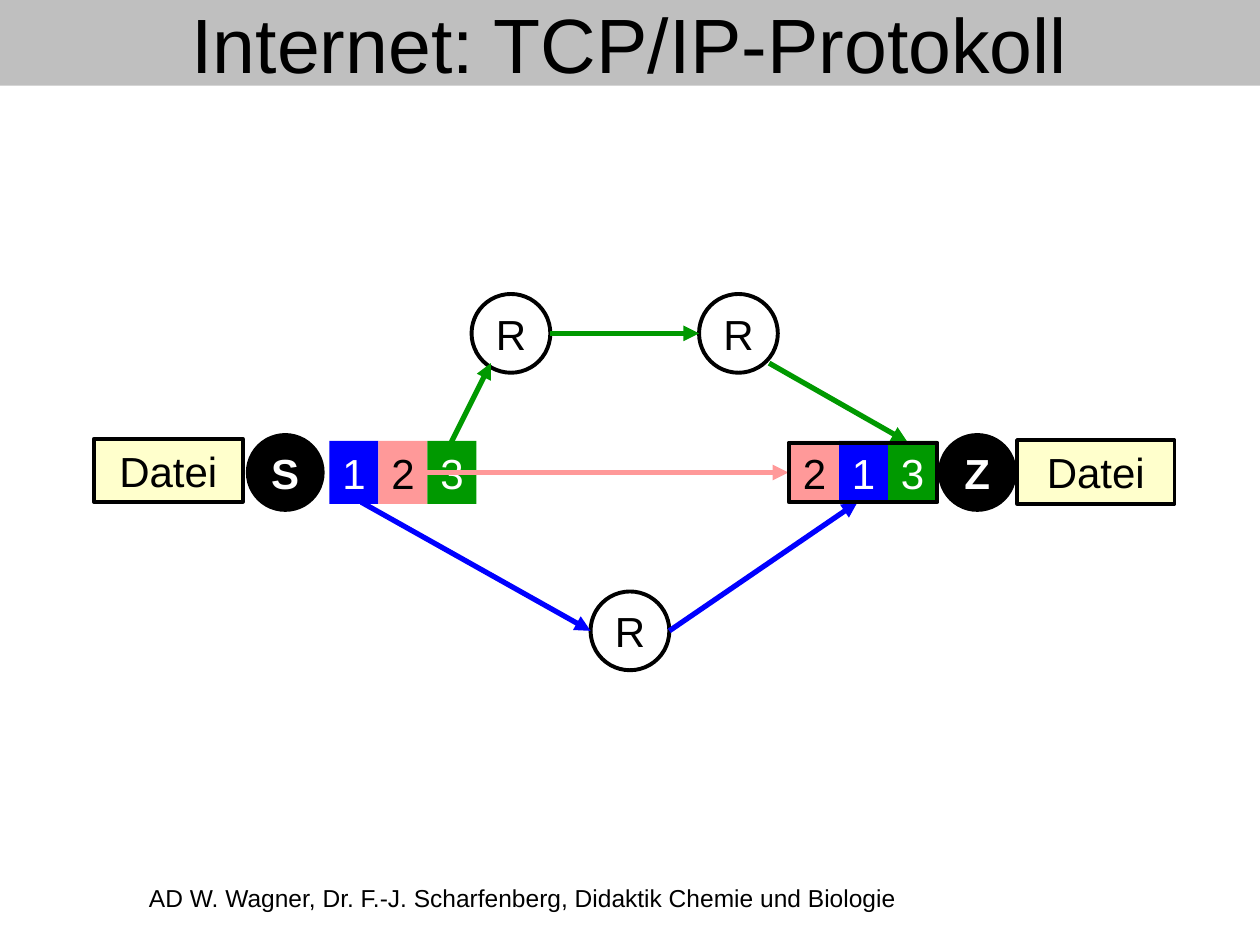
from pptx import Presentation
from pptx.dml.color import RGBColor
from pptx.enum.shapes import MSO_CONNECTOR, MSO_SHAPE
from pptx.enum.text import MSO_ANCHOR, MSO_AUTO_SIZE, PP_ALIGN
from pptx.oxml.ns import qn
from pptx.util import Pt
from lxml.etree import SubElement

COLORS = {
    "black": "000000", "white": "FFFFFF", "gray": "BFBFBF", "cream": "FFFFCC",
    "blue": "0000FF", "pink": "FF9999", "green": "009900",
}
PACKETS = {"1": ("blue", "white"), "2": ("pink", "black"), "3": ("green", "white")}
NODE = 45
PACKET_W, PACKET_H = 28, 36
PACKET_TOP = 252


def rgb(name):
    return RGBColor.from_string(COLORS[name])


class Sketch:
    """Holds the text style and the slide being drawn."""

    def __init__(self, slide, font="Arial", size=24):
        self.s, self.font, self.size = slide, font, size

    def label(self, sp, text, color="black", size=None, bold=False,
              align=PP_ALIGN.CENTER, anchor=MSO_ANCHOR.MIDDLE, wrap=False):
        tf = sp.text_frame
        tf.text = text
        tf.auto_size = MSO_AUTO_SIZE.NONE
        tf.word_wrap = wrap
        tf.vertical_anchor = anchor
        p = tf.paragraphs[0]
        p.alignment = align
        p.font.name, p.font.size, p.font.bold = self.font, Pt(size or self.size), bold
        p.font.color.rgb = rgb(color)

    def title(self, text, height):
        sp = self.s.shapes.title
        sp.left, sp.top, sp.width, sp.height = Pt(0), Pt(0), Pt(720), Pt(height)
        sp.fill.solid()
        sp.fill.fore_color.rgb = rgb("gray")
        self.label(sp, text, size=44, wrap=True)

    def credit(self, text, x, y, w, h):
        sp = self.s.shapes.add_textbox(Pt(x), Pt(y), Pt(w), Pt(h))
        self.label(sp, text, size=14, align=PP_ALIGN.LEFT, anchor=MSO_ANCHOR.TOP, wrap=True)

    def shape(self, kind, x, y, w, h, fill=None, outlined=False):
        sp = self.s.shapes.add_shape(kind, Pt(x), Pt(y), Pt(w), Pt(h))
        sp.shadow.inherit = False
        if fill:
            sp.fill.solid()
            sp.fill.fore_color.rgb = rgb(fill)
        else:
            sp.fill.background()
        if outlined:
            sp.line.color.rgb = rgb("black")
            sp.line.width = Pt(2.25)
        else:
            sp.line.fill.background()
        return sp

    def node(self, text, cx, cy, endpoint=False):
        """Draw a router, or a filled circle for the sender or the target."""
        sp = self.shape(MSO_SHAPE.OVAL, cx - NODE / 2, cy - NODE / 2, NODE, NODE,
                        "black" if endpoint else None, not endpoint)
        self.label(sp, text, "white" if endpoint else "black", bold=endpoint)

    def box(self, text, x, y, w, h, fill, color="black", outlined=False):
        sp = self.shape(MSO_SHAPE.RECTANGLE, x, y, w, h, fill, outlined)
        self.label(sp, text, color)

    def packets(self, order, x):
        for i, number in enumerate(order):
            self.box(number, x + i * PACKET_W, PACKET_TOP, PACKET_W, PACKET_H,
                     *PACKETS[number])

    def arrow(self, color, start, end):
        c = self.s.shapes.add_connector(MSO_CONNECTOR.STRAIGHT, *map(Pt, start + end))
        c.line.color.rgb = rgb(color)
        c.line.width = Pt(3)
        sp_pr = c._element.spPr
        SubElement(sp_pr.find(qn("a:ln")), qn("a:tailEnd"), type="triangle")
        SubElement(sp_pr, qn("a:effectLst"))


def main():
    prs = Presentation()
    prs.slide_width, prs.slide_height = Pt(720), Pt(540)
    sketch = Sketch(prs.slides.add_slide(prs.slide_layouts[5]))

    sketch.title("Internet: TCP/IP-Protokoll", 49)
    sketch.credit("AD W. Wagner, Dr. F.-J. Scharfenberg, Didaktik Chemie und Biologie",
                  78, 501, 564, 25)

    for cx, cy in [(292, 190.5), (422, 190.5), (360, 360.5)]:
        sketch.node("R", cx, cy)
    sketch.node("Z", 558.5, 270, endpoint=True)
    sketch.node("S", 163, 270, endpoint=True)

    sketch.packets("123", 188.3)
    for color, start, end in [
        ("blue", (206.5, 287), (337.5, 360.5)),
        ("blue", (382.5, 360.5), (490, 287)),
        ("pink", (241, 270), (450.5, 270)),
        ("green", (258, 252.5), (280.5, 207.5)),
        ("green", (314.5, 190.5), (399.5, 190.5)),
        ("green", (439.5, 207.5), (518.5, 252.5)),
    ]:
        sketch.arrow(color, start, end)

    sketch.box("Datei", 53.7, 250.8, 85, 36, "cream", outlined=True)
    sketch.box("Datei", 581.2, 251.5, 90, 36.3, "cream", outlined=True)
    sketch.packets("213", 451.5)
    sketch.shape(MSO_SHAPE.RECTANGLE, 450.7, 253, 85, 34, outlined=True)

    prs.save("out.pptx")


if __name__ == "__main__":
    main()
